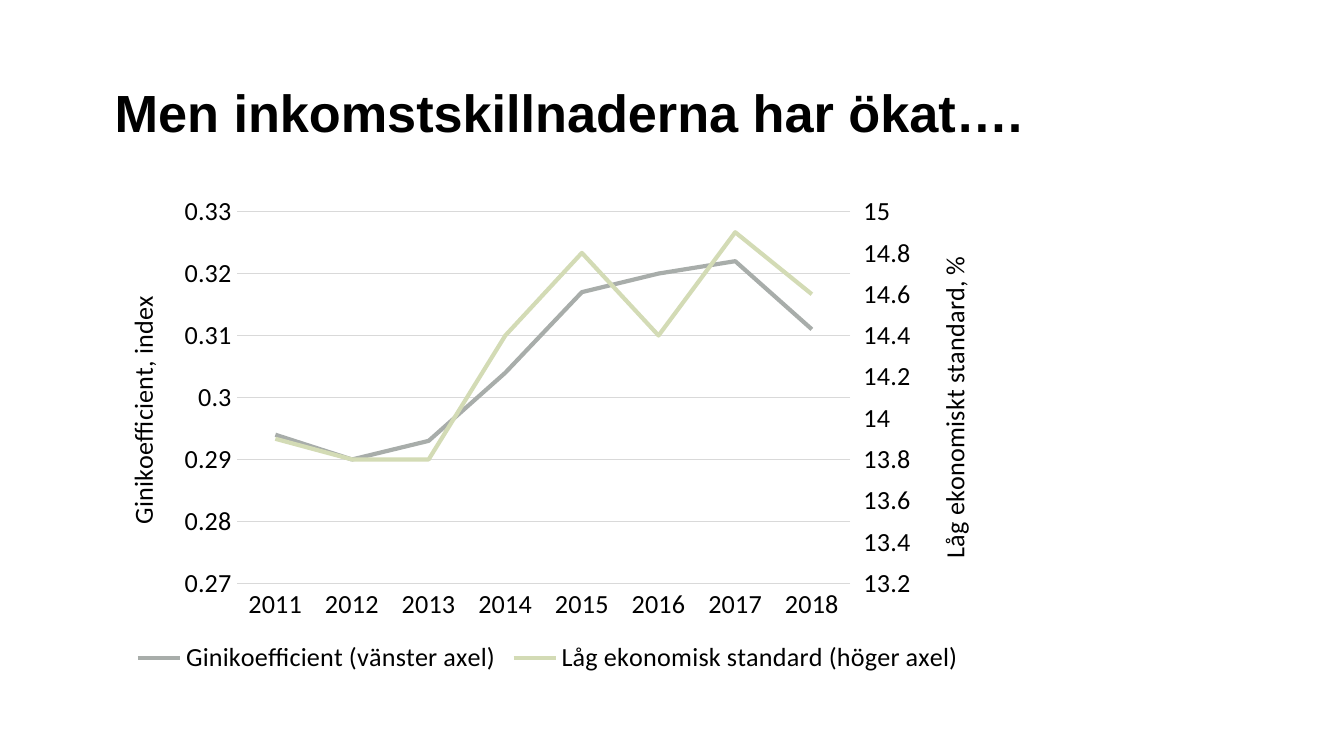
from copy import deepcopy
from dataclasses import dataclass

from lxml.etree import SubElement
from pptx import Presentation
from pptx.chart.axis import ValueAxis
from pptx.chart.data import CategoryChartData
from pptx.chart.chart import Chart
from pptx.dml.color import RGBColor
from pptx.enum.chart import XL_CHART_TYPE as ChartType
from pptx.enum.chart import XL_LEGEND_POSITION as LegendPosition
from pptx.enum.chart import XL_TICK_MARK as TickMark
from pptx.oxml import parse_xml
from pptx.oxml.ns import nsdecls, qn
from pptx.util import Pt


@dataclass(frozen=True)
class Theme:
    heading_font: str = "Arial"
    chart_font: str = "Calibri"
    heading_size: float = 28
    chart_size: float = 14
    ink: RGBColor = RGBColor(0, 0, 0)
    grid: RGBColor = RGBColor(0xD9, 0xD9, 0xD9)
    grid_width: float = 0.75
    series_width: float = 2.25


@dataclass(frozen=True)
class Measure:
    name: str
    values: tuple[float, ...]
    color: RGBColor
    axis_title: str
    title_place: tuple[float, float]
    low: float
    high: float
    step: float
    tick: TickMark


THEME = Theme()
YEARS = [str(year) for year in range(2011, 2019)]
GINI = Measure(
    "Ginikoefficient (vänster axel)",
    (0.294, 0.29, 0.293, 0.304, 0.317, 0.32, 0.322, 0.311),
    RGBColor(0xA8, 0xAD, 0xAA), "Ginikoefficient, index", (0.03, 0.21),
    0.27, 0.33, 0.01, TickMark.NONE,
)
LOW_STANDARD = Measure(
    "Låg ekonomisk standard (höger axel)",
    (13.9, 13.8, 13.8, 14.4, 14.8, 14.4, 14.9, 14.6),
    RGBColor(0xD3, 0xDB, 0xB5), "Låg ekonomiskt standard, %", (0.93, 0.13),
    13.2, 15, 0.2, TickMark.OUTSIDE,
)
MEASURES = (GINI, LOW_STANDARD)


def set_layout(parent, index: int, inner: bool = False, **fractions: float) -> None:
    """Place a chart part by fractions of the chart area."""
    for old in parent.findall(qn("c:layout")):
        parent.remove(old)
    layout = parse_xml(f"<c:layout {nsdecls('c')}><c:manualLayout/></c:layout>")
    manual = layout[0]
    if inner:
        SubElement(manual, qn("c:layoutTarget")).set("val", "inner")
    for side in ("xMode", "yMode"):
        SubElement(manual, qn(f"c:{side}")).set("val", "edge")
    for side, fraction in fractions.items():
        SubElement(manual, qn(f"c:{side}")).set("val", str(fraction))
    parent.insert(index, layout)


def add_right_axis(chart: Chart) -> ValueAxis:
    """Move the last series to a second line plot with its own value axis."""
    plot_area = chart.element.xpath(".//c:plotArea")[0]
    left_plot = plot_area.find(qn("c:lineChart"))
    right_plot = deepcopy(left_plot)
    left_plot.remove(left_plot.findall(qn("c:ser"))[-1])
    right_plot.remove(right_plot.findall(qn("c:ser"))[0])
    left_plot.addnext(right_plot)

    years_axis = plot_area.find(qn("c:catAx"))
    left_axis = plot_area.find(qn("c:valAx"))
    hidden_years, right_axis = deepcopy(years_axis), deepcopy(left_axis)
    left_axis.addnext(right_axis)
    right_axis.addnext(hidden_years)
    new_ids = {
        axis.find(qn("c:axId")).get("val"): new_id
        for axis, new_id in ((years_axis, "5001"), (left_axis, "5002"))
    }
    for part in (right_plot, hidden_years, right_axis):
        for reference in part.xpath("./c:axId | ./c:crossAx"):
            reference.set("val", new_ids[reference.get("val")])
    hidden_years.find(qn("c:delete")).set("val", "1")
    right_axis.find(qn("c:axPos")).set("val", "r")
    right_axis.find(qn("c:crosses")).set("val", "max")
    return ValueAxis(right_axis)


def style_font(font, name: str, size: float, bold: bool = False) -> None:
    font.name, font.size, font.bold = name, Pt(size), bold
    font.color.rgb = THEME.ink


def style_value_axis(axis: ValueAxis, measure: Measure) -> None:
    axis.minimum_scale, axis.maximum_scale = measure.low, measure.high
    axis.major_unit = measure.step
    axis.major_tick_mark = measure.tick
    axis.minor_tick_mark = TickMark.NONE
    axis.format.line.fill.background()
    style_font(axis.tick_labels.font, THEME.chart_font, THEME.chart_size)
    title = axis.axis_title
    run = title.text_frame.paragraphs[0].add_run()
    run.text = measure.axis_title
    style_font(run.font, THEME.chart_font, THEME.chart_size)
    body = title.element.xpath(".//a:bodyPr")[0]
    body.set("rot", "-5400000")
    body.set("vert", "horz")
    x, y = measure.title_place
    set_layout(title.element, 1, x=x, y=y)


def style_grid_line(line) -> None:
    line.color.rgb = THEME.grid
    line.width = Pt(THEME.grid_width)


def add_heading(slide, text: str) -> None:
    box = slide.shapes.add_textbox(Pt(41), Pt(39.6), Pt(566.6), Pt(60.5))
    frame = box.text_frame
    frame.word_wrap = True
    frame.margin_left, frame.margin_top = Pt(20.5), Pt(3.3)
    paragraph = frame.paragraphs[0]
    paragraph.space_after = Pt(6)
    run = paragraph.add_run()
    run.text = text
    style_font(run.font, THEME.heading_font, THEME.heading_size, bold=True)


def add_legend(chart: Chart) -> None:
    """Add a legend wide enough for both names to share one row."""
    chart.has_legend = True
    legend = chart.legend
    legend.position = LegendPosition.BOTTOM
    legend.include_in_layout = False
    style_font(legend.font, THEME.chart_font, THEME.chart_size)
    legend_part = chart.element.xpath(".//c:legend")[0]
    set_layout(legend_part, 1, x=0.04, y=0.9, w=0.93, h=0.1)


def add_income_chart(slide) -> None:
    data = CategoryChartData()
    data.categories = YEARS
    for measure in MEASURES:
        data.add_series(measure.name, measure.values)
    chart = slide.shapes.add_chart(
        ChartType.LINE, Pt(49.7), Pt(100.1), Pt(483.1), Pt(265.7), data
    ).chart
    chart.has_title = False
    style_font(chart.font, THEME.chart_font, THEME.chart_size)

    value_axis, years_axis = chart.value_axis, chart.category_axis
    value_axis.has_major_gridlines = False
    right_axis = add_right_axis(chart)
    for axis, measure in zip((value_axis, right_axis), MEASURES):
        style_value_axis(axis, measure)
    style_grid_line(value_axis.major_gridlines.format.line)
    years_axis.major_tick_mark = years_axis.minor_tick_mark = TickMark.NONE
    style_grid_line(years_axis.format.line)
    style_font(years_axis.tick_labels.font, THEME.chart_font, THEME.chart_size)

    for plot, measure in zip(chart.plots, MEASURES):
        plot.vary_by_categories = False
        series = plot.series[0]
        series.smooth = False
        series.format.line.color.rgb = measure.color
        series.format.line.width = Pt(THEME.series_width)

    add_legend(chart)
    plot_area = chart.element.xpath(".//c:plotArea")[0]
    set_layout(plot_area, 0, inner=True, x=0.16, y=0.05, w=0.68, h=0.75)


def main() -> None:
    deck = Presentation()
    deck.slide_width, deck.slide_height = Pt(720), Pt(405)
    slide = deck.slides.add_slide(deck.slide_layouts[6])
    add_heading(slide, "Men inkomstskillnaderna har ökat….")
    add_income_chart(slide)
    deck.save("out.pptx")


if __name__ == "__main__":
    main()
